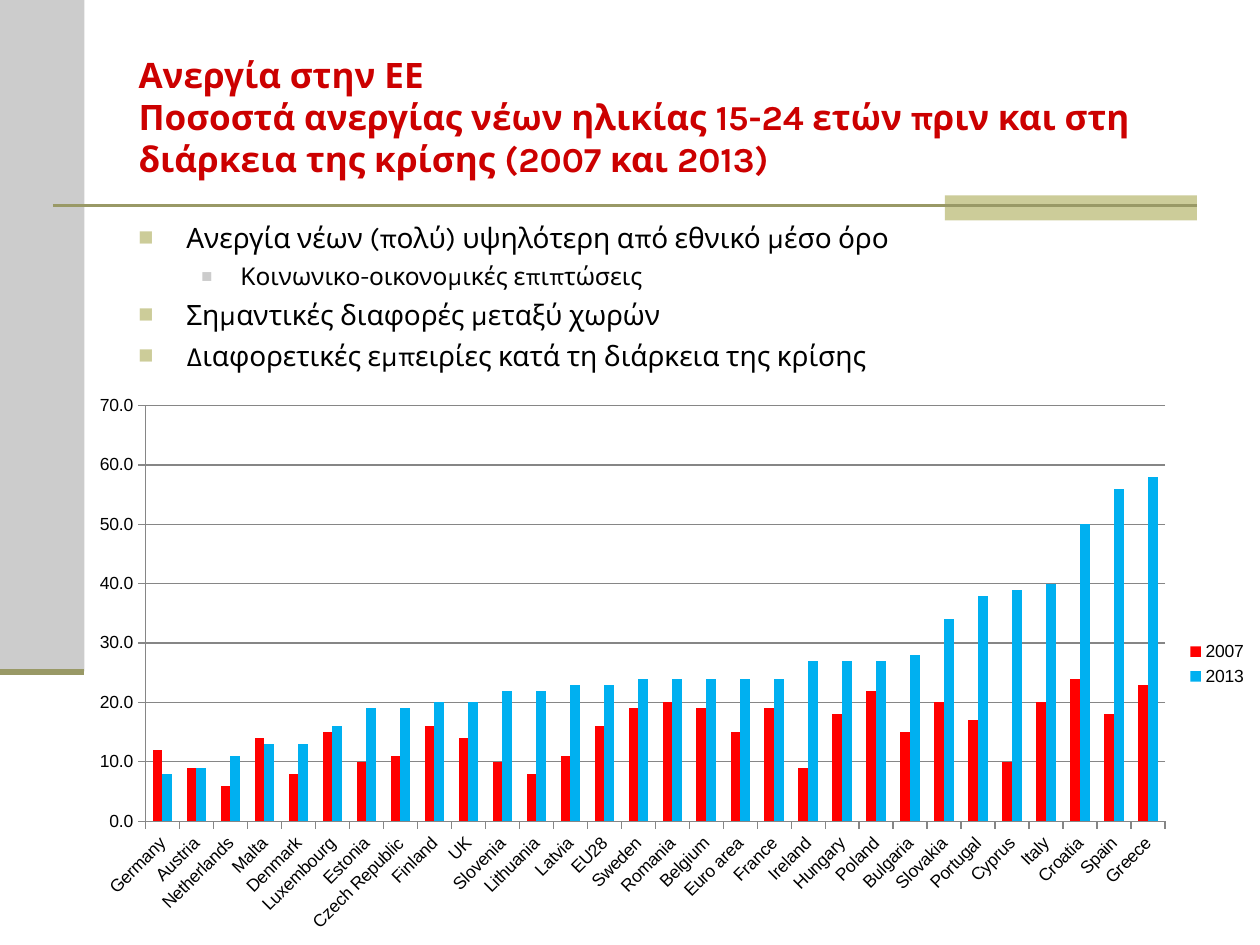
from copy import deepcopy

from lxml.etree import SubElement
from pptx import Presentation
from pptx.chart.data import CategoryChartData
from pptx.dml.color import RGBColor
from pptx.enum.chart import XL_CHART_TYPE, XL_LEGEND_POSITION, XL_TICK_MARK
from pptx.enum.shapes import MSO_CONNECTOR, MSO_SHAPE
from pptx.enum.text import MSO_ANCHOR, MSO_AUTO_SIZE, PP_ALIGN
from pptx.oxml.ns import qn
from pptx.util import Emu, Inches, Pt

COLUMNS, ROWS = 40, 30
WIDTH, HEIGHT = Inches(10), Inches(7.5)

TITLE = ("Ανεργία στην ΕΕ",
         "Ποσοστά ανεργίας νέων ηλικίας 15-24 ετών πριν και στη "
         "διάρκεια της κρίσης (2007 και 2013)")
POINTS = [(0, "Ανεργία νέων (πολύ) υψηλότερη από εθνικό μέσο όρο"),
          (1, "Κοινωνικο-οικονομικές επιπτώσεις"),
          (0, "Σημαντικές διαφορές μεταξύ χωρών"),
          (0, "Διαφορετικές εμπειρίες κατά τη διάρκεια της κρίσης")]
LEVELS = [dict(indent=0.38, hanging=0.38, size=16, bullet="CCCC99", share=90),
          dict(indent=0.81, hanging=0.31, size=14, bullet="CCCCCC", share=75)]
COUNTRIES = [
    "Germany", "Austria", "Netherlands", "Malta", "Denmark", "Luxembourg",
    "Estonia", "Czech Republic", "Finland", "UK", "Slovenia", "Lithuania",
    "Latvia", "EU28", "Sweden", "Romania", "Belgium", "Euro area", "France",
    "Ireland", "Hungary", "Poland", "Bulgaria", "Slovakia", "Portugal",
    "Cyprus", "Italy", "Croatia", "Spain", "Greece"]
RATES = {
    "2007": ("FF0000", [12, 9, 6, 14, 8, 15, 10, 11, 16, 14, 10, 8, 11, 16, 19,
                        20, 19, 15, 19, 9, 18, 22, 15, 20, 17, 10, 20, 24, 18, 23]),
    "2013": ("00B0F0", [8, 9, 11, 13, 13, 16, 19, 19, 20, 20, 22, 22, 23, 23, 24,
                        24, 24, 24, 24, 27, 27, 27, 28, 34, 38, 39, 40, 50, 56, 58])}


def color(value):
    return RGBColor.from_string(value)


def area(column, row, columns, rows):
    """Turn grid cells into left, top, width and height."""
    return (Emu(int(WIDTH * column / COLUMNS)), Emu(int(HEIGHT * row / ROWS)),
            Emu(int(WIDTH * columns / COLUMNS)), Emu(int(HEIGHT * rows / ROWS)))


def set_font(font, fill, **values):
    font.color.rgb = color(fill)
    for name, value in values.items():
        setattr(font, name, value)


def add_block(page, box, fill):
    block = page.shapes.add_shape(MSO_SHAPE.RECTANGLE, *box)
    block.shadow.inherit = False
    block.fill.solid()
    block.fill.fore_color.rgb = color(fill)
    block.line.fill.background()


def add_rule(page, box, width):
    left, top, length, _ = box
    rule = page.shapes.add_connector(MSO_CONNECTOR.STRAIGHT, left, top, left + length, top)
    rule.line.color.rgb = color("999966")
    rule.line.width = Pt(width)
    SubElement(rule.element.spPr, qn("a:effectLst"))


def add_decoration(page):
    add_block(page, area(0, 0, 2.68, 21.32), "CCCCCC")
    add_block(page, area(30, 6.2, 8, 0.8), "CCCC99")
    add_rule(page, area(1.68, 6.52, 36.32, 0), 1.5)
    add_rule(page, area(0, 21.32, 2.68, 0), 3.5)


def place_title(page, box):
    title = page.shapes.title
    title.left, title.top, title.width, title.height = box
    frame = title.text_frame
    frame.auto_size = MSO_AUTO_SIZE.NONE
    frame.vertical_anchor = MSO_ANCHOR.MIDDLE
    frame.text = "\v".join(TITLE)
    para = frame.paragraphs[0]
    para.alignment = PP_ALIGN.LEFT
    for span in para.runs:
        set_font(span.font, "CC0000", name="Karla", size=Pt(20), bold=True)
    # The line break needs the same size as the text around it.
    for line_break in para._p.findall(qn("a:br")):
        line_break.insert(0, deepcopy(para._p.find(qn("a:r")).find(qn("a:rPr"))))


def add_bullet(para, level):
    properties = para._p.get_or_add_pPr()
    properties.set("marL", str(Inches(level["indent"])))
    properties.set("indent", str(-Inches(level["hanging"])))
    tint = SubElement(properties, qn("a:buClr"))
    SubElement(tint, qn("a:srgbClr"), val=level["bullet"])
    SubElement(properties, qn("a:buSzPct"), val=str(level["share"] * 1000))
    SubElement(properties, qn("a:buFont"), typeface="Arial")
    SubElement(properties, qn("a:buChar"), char="■")


def add_points(page, box):
    frame = page.shapes.add_textbox(*box).text_frame
    frame.word_wrap = True
    for index, (depth, text) in enumerate(POINTS):
        level = LEVELS[depth]
        para = frame.add_paragraph() if index else frame.paragraphs[0]
        para.level = depth
        add_bullet(para, level)
        para.space_before = Pt(2 if index else 0)
        para.space_after = Pt(2)
        span = para.add_run()
        span.text = text
        set_font(span.font, "000000", name="Karla", size=Pt(level["size"]))


def set_plot_area(chart, **shares):
    """Fix the inner plot area as shares of the chart."""
    plot_area = chart._chartSpace.chart.plotArea
    for old in plot_area.findall(qn("c:layout")):
        plot_area.remove(old)
    layout = SubElement(plot_area, qn("c:layout"))
    plot_area.insert(0, layout)
    manual = SubElement(layout, qn("c:manualLayout"))
    values = dict(layoutTarget="inner", xMode="edge", yMode="edge", **shares)
    for name, value in values.items():
        SubElement(manual, qn(f"c:{name}"), val=str(value))


def add_rate_chart(page, box):
    data = CategoryChartData(number_format="#,##0.0")
    data.categories = COUNTRIES
    for year, (_, rates) in RATES.items():
        data.add_series(year, rates)
    chart = page.shapes.add_chart(XL_CHART_TYPE.COLUMN_CLUSTERED, *box, data).chart
    set_font(chart.font, "000000", name="Arial", size=Pt(10))
    chart.has_title = False
    chart.has_legend = True
    chart.legend.position = XL_LEGEND_POSITION.RIGHT
    chart.legend.include_in_layout = False
    set_plot_area(chart, x=0.06, y=0.04, w=0.86, h=0.74)

    plot = chart.plots[0]
    plot.vary_by_categories = False
    plot.gap_width, plot.overlap = 150, 0
    for series, (fill, _) in zip(plot.series, RATES.values()):
        series.format.fill.solid()
        series.format.fill.fore_color.rgb = color(fill)
        series.invert_if_negative = False

    countries, rates = chart.category_axis, chart.value_axis
    for axis in (countries, rates):
        axis.major_tick_mark = XL_TICK_MARK.OUTSIDE
        axis.format.line.color.rgb = color("868686")
        set_font(axis.tick_labels.font, "000000", name="Arial", size=Pt(10))
    countries._element.txPr.find(qn("a:bodyPr")).set("rot", str(-45 * 60000))
    rates.minimum_scale, rates.maximum_scale, rates.major_unit = 0, 70, 10
    rates.major_gridlines.format.line.color.rgb = color("868686")
    rates.tick_labels.number_format = "#,##0.0"
    rates.tick_labels.number_format_is_linked = False


def main():
    deck = Presentation()
    deck.slide_width, deck.slide_height = WIDTH, HEIGHT
    page = deck.slides.add_slide(deck.slide_layouts.get_by_name("Title Only"))
    add_decoration(page)
    place_title(page, area(4, 1.2, 34, 5))
    add_rate_chart(page, area(2.36, 12.16, 37.64, 17.84))
    add_points(page, area(4, 6.8, 34.6, 4.2))
    deck.save("out.pptx")


if __name__ == "__main__":
    main()
